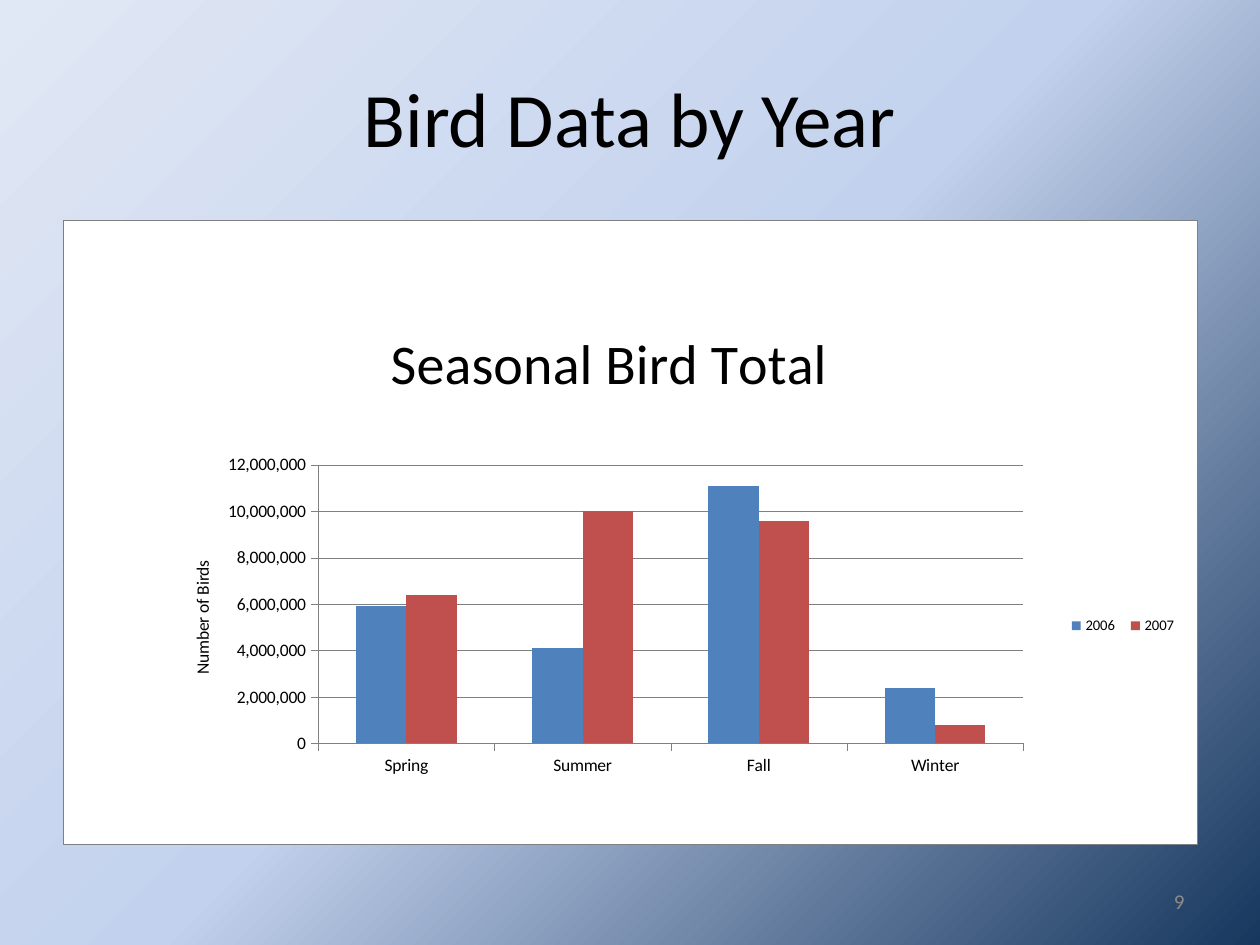
from pptx import Presentation
from pptx.chart.data import CategoryChartData
from pptx.dml.color import RGBColor
from pptx.enum.chart import XL_CHART_TYPE, XL_LEGEND_POSITION, XL_TICK_MARK
from pptx.enum.text import MSO_ANCHOR, PP_ALIGN
from pptx.oxml import parse_xml
from pptx.oxml.ns import nsdecls, qn
from pptx.util import Pt

COLORS = {
    "ink": "000000",
    "page": "8C8C8C",
    "rule": "808080",
    "panel": "FFFFFF",
    "2006": "4F81BD",
    "2007": "C0504D",
}
BACKDROP = [(0, "17375E"), (50, "C2D1ED"), (100, "E1E8F5")]
SEASONS = ["Spring", "Summer", "Fall", "Winter"]
BIRDS = {
    "2006": [5900000, 4100000, 11100000, 2400000],
    "2007": [6400000, 10000000, 9600000, 800000],
}


class SlideBuilder:
    def __init__(self, slide, typeface="Calibri"):
        self.slide = slide
        self.typeface = typeface

    def style_font(self, font, size, color="ink"):
        font.name = self.typeface
        font.size = Pt(size)
        font.bold = False
        font.color.rgb = RGBColor.from_string(COLORS[color])

    def style_rule(self, line):
        line.color.rgb = RGBColor.from_string(COLORS["rule"])
        line.width = Pt(0.25)

    def background(self, stops):
        fill = self.slide.background.fill
        fill.gradient()
        gradient = self.slide.background._cSld.find(".//" + qn("a:gradFill"))
        stop_xml = "".join(
            f'<a:gs pos="{percent * 1000}"><a:srgbClr val="{color}"/></a:gs>'
            for percent, color in stops
        )
        gradient.getparent().replace(gradient, parse_xml(
            f'<a:gradFill {nsdecls("a")} rotWithShape="1"><a:gsLst>{stop_xml}</a:gsLst>'
            '<a:path path="circle"><a:fillToRect l="100000" t="100000"/></a:path></a:gradFill>'
        ))

    def text(self, words, box, size, align, color="ink"):
        frame = self.slide.shapes.add_textbox(*map(Pt, box)).text_frame
        frame.word_wrap = True
        frame.vertical_anchor = MSO_ANCHOR.MIDDLE
        paragraph = frame.paragraphs[0]
        paragraph.text = words
        paragraph.alignment = align
        self.style_font(paragraph.font, size, color)

    def place(self, element, index, target="", **fractions):
        for layout in element.findall(qn("c:layout")):
            element.remove(layout)
        target_xml = f'<c:layoutTarget val="{target}"/>' if target else ""
        modes = "".join(f'<c:{side}Mode val="edge"/>' for side in "xy")
        sizes = "".join(f'<c:{side} val="{value}"/>' for side, value in fractions.items())
        element.insert(index, parse_xml(
            f'<c:layout {nsdecls("c")}><c:manualLayout>{target_xml}{modes}{sizes}'
            "</c:manualLayout></c:layout>"
        ))

    def panel(self, border=False):
        outline = (
            f'<a:ln w="{Pt(0.25)}"><a:solidFill><a:srgbClr val="{COLORS["rule"]}"/></a:solidFill></a:ln>'
            if border else "<a:ln><a:noFill/></a:ln>"
        )
        return parse_xml(
            f'<c:spPr {nsdecls("c", "a")}><a:solidFill><a:srgbClr val="{COLORS["panel"]}"/>'
            f"</a:solidFill>{outline}</c:spPr>"
        )

    def chart_heading(self, title, words, size, x, y):
        paragraph = title.text_frame.paragraphs[0]
        paragraph.text = words
        self.style_font(paragraph.font, size)
        self.place(title._element, 1, x=x, y=y)

    def column_chart(self, heading, value_heading, categories, series, box):
        data = CategoryChartData(number_format="#,##0")
        data.categories = categories
        for name, values in series.items():
            data.add_series(name, values)
        chart = self.slide.shapes.add_chart(
            XL_CHART_TYPE.COLUMN_CLUSTERED, *map(Pt, box), data
        ).chart
        self.style_font(chart.font, 10)
        chart.has_title = True
        self.chart_heading(chart.chart_title, heading, 32, 0.28, 0.15)

        for axis in (chart.category_axis, chart.value_axis):
            axis.major_tick_mark = XL_TICK_MARK.OUTSIDE
            axis.minor_tick_mark = XL_TICK_MARK.NONE
            self.style_font(axis.tick_labels.font, 10)
            self.style_rule(axis.format.line)
        counts = chart.value_axis
        counts.minimum_scale, counts.maximum_scale = 0, 12000000
        counts.major_unit = 2000000
        counts.tick_labels.number_format = "#,##0"
        counts.tick_labels.number_format_is_linked = False
        self.style_rule(counts.major_gridlines.format.line)
        counts.has_title = True
        self.chart_heading(counts.axis_title, value_heading, 10, 0.11, 0.54)

        plot = chart.plots[0]
        plot.vary_by_categories = False
        plot.gap_width, plot.overlap = 150, 0
        for year in plot.series:
            year.format.fill.solid()
            year.format.fill.fore_color.rgb = RGBColor.from_string(COLORS[year.name])

        chart.has_legend = True
        chart.legend.position = XL_LEGEND_POSITION.RIGHT
        chart.legend.include_in_layout = False
        self.style_font(chart.legend.font, 8.4)
        self.place(chart.legend._element, 1, x=0.88, y=0.63, w=0.11, h=0.04)

        chart_space = chart._chartSpace
        plot_area = chart_space.find(".//" + qn("c:plotArea"))
        self.place(plot_area, 0, "inner", x=0.225, y=0.392, w=0.622, h=0.447)
        plot_area.append(self.panel())
        chart_space.find(qn("c:chart")).addnext(self.panel(border=True))


def main():
    deck = Presentation()
    deck.slide_width, deck.slide_height = Pt(720), Pt(540)
    builder = SlideBuilder(deck.slides.add_slide(deck.slide_layouts[6]))
    builder.background(BACKDROP)
    builder.text("Bird Data by Year", (36, 21.6, 648, 90), 44, PP_ALIGN.CENTER)
    builder.column_chart(
        "Seasonal Bird Total", "Number of Birds", SEASONS, BIRDS, (36, 126, 648, 356.4)
    )
    builder.text("9", (516, 500.5, 168, 28.75), 12, PP_ALIGN.RIGHT, "page")
    deck.save("out.pptx")


if __name__ == "__main__":
    main()
